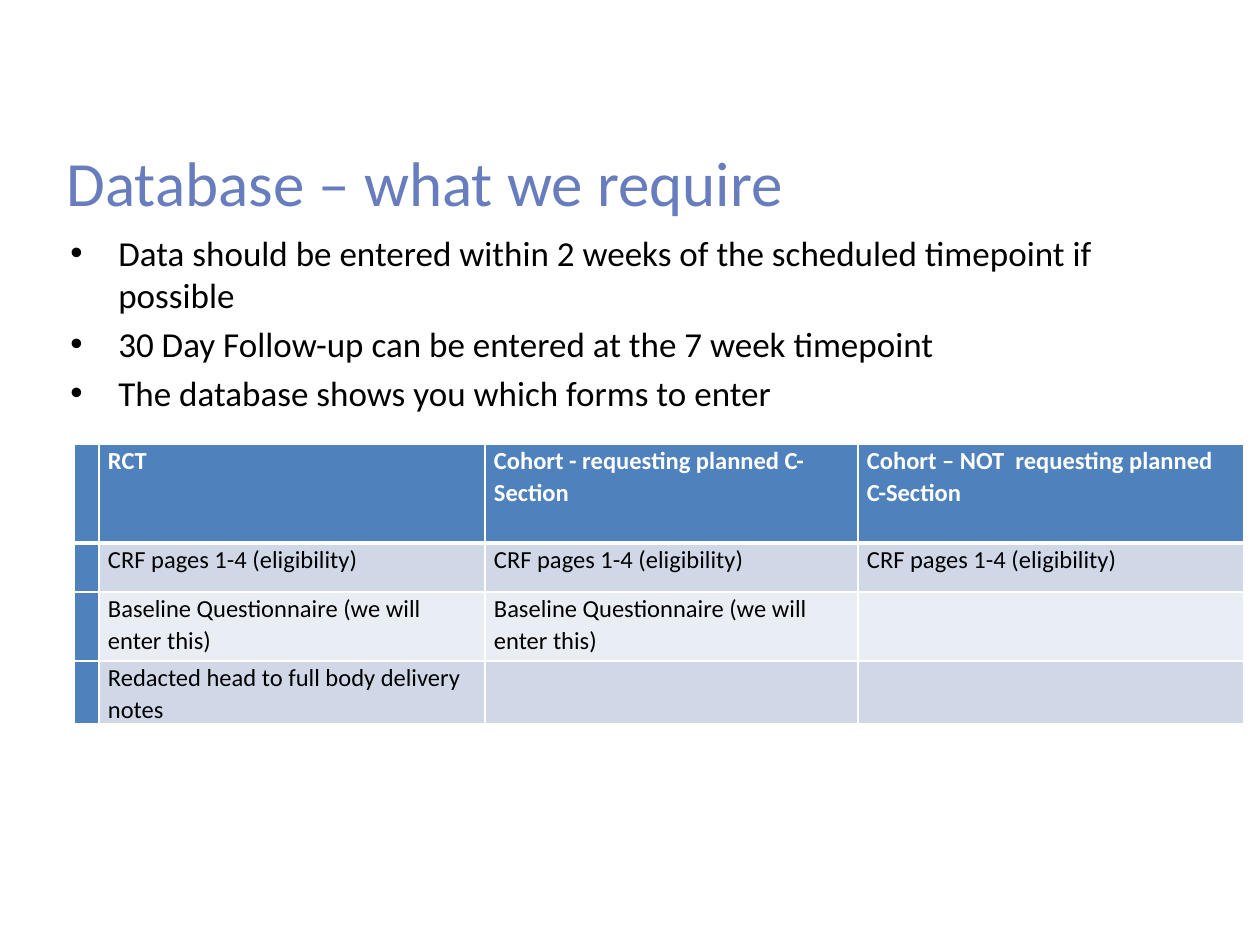
import pptx
import pptx.dml.color
import pptx.util
from lxml import etree
from pptx.oxml.ns import qn

PX = 914400 // 126


def colour(code):
    return pptx.dml.color.RGBColor.from_string(code)


def write(para, text, size, code, bold=False):
    """Add one styled run to a paragraph."""
    span = para.add_run()
    span.text = text
    style = {"name": "Calibri", "size": pptx.util.Pt(size), "bold": bold}
    for name, value in style.items():
        setattr(span.font, name, value)
    span.font.color.rgb = colour(code)


deck = pptx.Presentation()
deck.slide_width, deck.slide_height = 1260 * PX, 945 * PX
page = deck.slides.add_slide(deck.slide_layouts[6])

# Title
title = page.shapes.add_textbox(54 * PX, 137 * PX, 853 * PX, 89 * PX)
title.text_frame.word_wrap = True
write(title.text_frame.paragraphs[0], "Database – what we require", 36, "687DBE")

# Bullet list
points = [
    "Data should be entered within 2 weeks of the scheduled timepoint if possible",
    "30 Day Follow-up can be entered at the 7 week timepoint",
    "The database shows you which forms to enter",
]
body = page.shapes.add_textbox(58 * PX, 225 * PX, 1160 * PX, 576 * PX)
body.text_frame.word_wrap = True
for index, point in enumerate(points):
    para = body.text_frame.paragraphs[0] if index == 0 else body.text_frame.add_paragraph()
    props = para._p.get_or_add_pPr()
    props.set("marL", str(48 * PX))
    props.set("indent", str(-48 * PX))
    etree.SubElement(props, qn("a:buFont"), typeface="Arial")
    etree.SubElement(props, qn("a:buChar"), char="•")
    if index:
        para.space_before = pptx.util.Pt(4)
    write(para, point, 20, "000000")

# Table of forms for each study group
eligibility = "CRF pages 1-4 (eligibility)"
baseline = "Baseline Questionnaire (we will enter this)"
rows = [
    ["", "RCT", "Cohort - requesting planned C-Section",
     "Cohort – NOT  requesting planned C-Section"],
    ["", eligibility, eligibility, eligibility],
    ["", baseline, baseline, ""],
    ["", "Redacted head to full body delivery notes", "", ""],
]
widths = [25, 386, 373, 386]
heights = [99, 49, 69, 63]
bands = ["4F81BD", "D0D8E8", "E9EDF4", "D0D8E8"]
cell_format = {"margin_left": 9 * PX, "margin_right": 9 * PX,
               "margin_top": 0, "margin_bottom": 0}

forms = page.shapes.add_table(len(rows), len(widths), 74 * PX, 444 * PX,
                              sum(widths) * PX, sum(heights) * PX).table
for column, width in zip(forms.columns, widths):
    column.width = width * PX
for row, height in zip(forms.rows, heights):
    row.height = height * PX

for r, texts in enumerate(rows):
    for c, text in enumerate(texts):
        cell = forms.cell(r, c)
        for name, value in cell_format.items():
            setattr(cell, name, value)
        para = cell.text_frame.paragraphs[0]
        para.line_spacing = 1.07
        if text:
            write(para, text, 14, "000000" if r else "FFFFFF", bold=r == 0)

        props = cell._tc.get_or_add_tcPr()
        for side in ("lnL", "lnR", "lnT", "lnB"):
            header_edge = (r, side) in ((0, "lnB"), (1, "lnT"))
            points_wide = 3 if header_edge else 1
            line = etree.SubElement(props, qn(f"a:{side}"), w=str(pptx.util.Pt(points_wide)))
            paint = etree.SubElement(line, qn("a:solidFill"))
            etree.SubElement(paint, qn("a:srgbClr"), val="FFFFFF")
        cell.fill.solid()
        cell.fill.fore_color.rgb = colour(bands[r] if c else bands[0])

deck.save("out.pptx")
